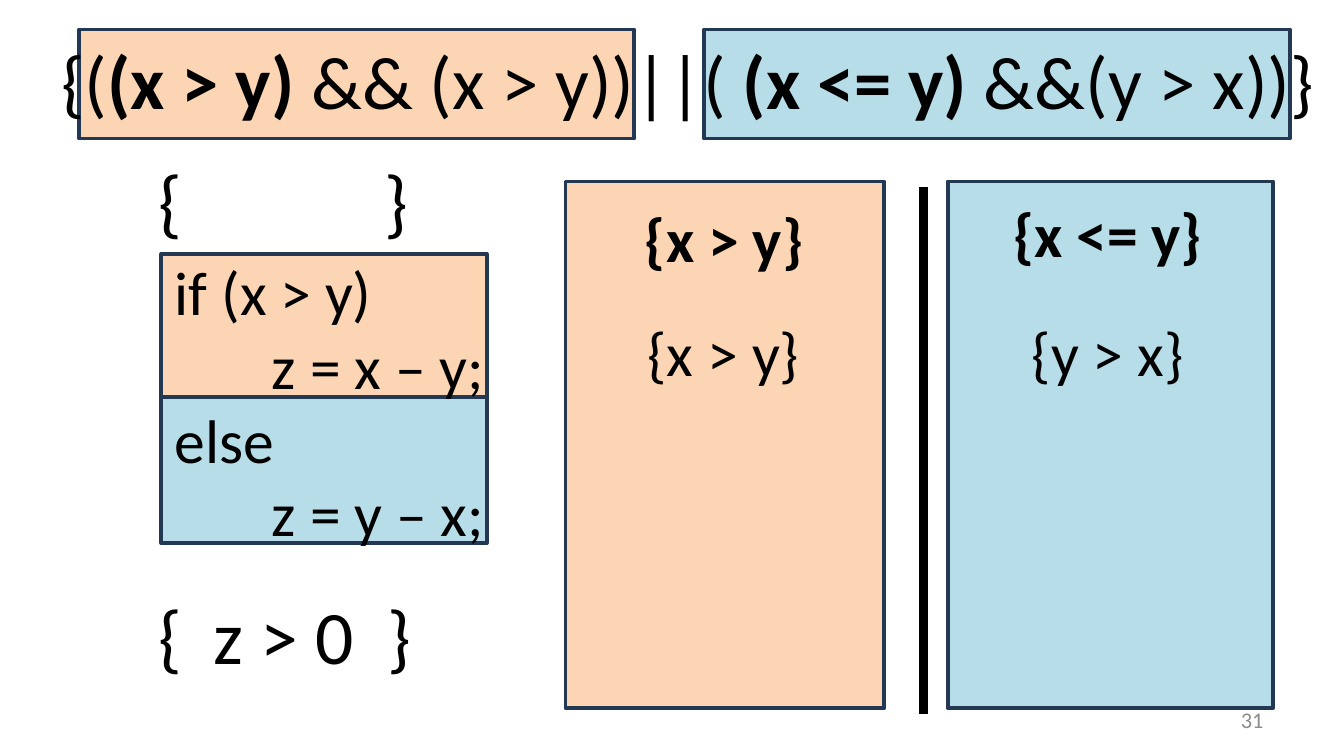
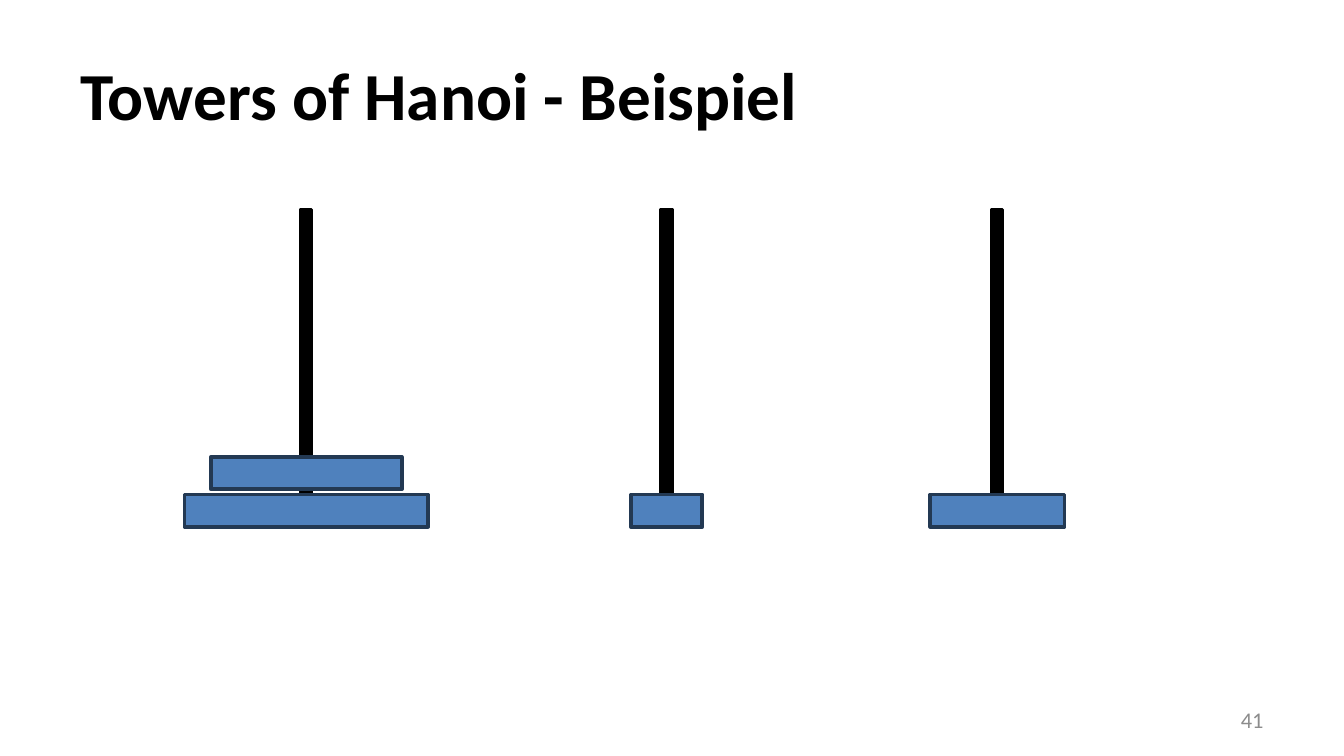
from lxml.etree import SubElement
from pptx import Presentation
from pptx.dml.color import RGBColor as Rgb
from pptx.enum.shapes import MSO_CONNECTOR as Link, MSO_SHAPE as Form
from pptx.enum.text import MSO_ANCHOR as Anchor, PP_ALIGN as Align
from pptx.oxml.ns import qn
from pptx.util import Cm, Pt

FONT = "Calibri"
HUES = {
    "ink": "000000",
    "edge": "233953",
    "then": "FCD5B5",
    "else": "B7DEE8",
    "disk": "4F81BD",
    "page": "8C8C8C",
}


def hue(name):
    return Rgb.from_string(HUES[name])


def add_box(slide, x, y, w, h, fill, edge="edge"):
    box = slide.shapes.add_shape(Form.RECTANGLE, Cm(x), Cm(y), Cm(w), Cm(h))
    box.shadow.inherit = False
    box.fill.solid()
    box.fill.fore_color.rgb = hue(fill)
    box.line.color.rgb = hue(edge)
    box.line.width = Pt(2)


def add_rule(slide, x, top, end):
    rule = slide.shapes.add_connector(Link.STRAIGHT, Cm(x), Cm(top), Cm(x), Cm(end))
    rule.line.color.rgb = hue("ink")
    rule.line.width = Pt(4.5)
    SubElement(rule._element.spPr, qn("a:effectLst"))


def set_tabs(para, stops):
    tabs = SubElement(para._p.get_or_add_pPr(), qn("a:tabLst"))
    for stop in stops:
        SubElement(tabs, qn("a:tab"), pos=str(Cm(stop)), algn="l")


def add_text(slide, x, y, w, h, lines, size, color="ink", wrap=True,
             anchor=Anchor.TOP, align=Align.LEFT, tabs=()):
    """Each line is (indent in cm, [(text, bold), ...])."""
    frame = slide.shapes.add_textbox(Cm(x), Cm(y), Cm(w), Cm(h)).text_frame
    frame.word_wrap = wrap
    frame.vertical_anchor = anchor
    for num, (indent, runs) in enumerate(lines):
        para = frame.add_paragraph() if num else frame.paragraphs[0]
        para.alignment = align
        if indent:
            para._p.get_or_add_pPr().set("marL", str(Cm(indent)))
        if tabs:
            set_tabs(para, tabs)
        for text, bold in runs:
            run = para.add_run()
            run.text = text
            run.font.name = FONT
            run.font.size = Pt(size)
            run.font.bold = bold
            run.font.color.rgb = hue(color)


def add_label(slide, x, y, w, text, bold=False):
    add_text(slide, x, y, w, 1.68, [(0, [(text, bold)])], 33, wrap=False)


def add_state(slide, y, text, tabs):
    add_text(slide, 2.74, y, 6.43, 1.98, [(0, [(text, False)])], 40.5, tabs=tabs)


def add_page(slide, num):
    add_text(slide, 18.21, 13.23, 5.92, 0.76, [(0, [(str(num), False)])], 12,
             "page", anchor=Anchor.MIDDLE, align=Align.RIGHT)


def add_title(slide, text):
    add_text(slide, 1.27, 0.58, 22.86, 2.39, [(0, [(text, True)])], 36,
             anchor=Anchor.MIDDLE)


def add_tower(slide, mid, disks):
    """Stack disks of the given widths, bottom first, on a peg centred at mid."""
    add_box(slide, mid - 0.1, 3.96, 0.2, 5.99, "ink", "ink")
    for level, width in enumerate(disks):
        add_box(slide, mid - width / 2, 9.35 - 0.71 * level, width, 0.61, "disk")


def draw_proof(slide):
    add_box(slide, 13.31, 0.56, 11.07, 2.06, "else")
    add_box(slide, 1.5, 0.56, 10.49, 2.06, "then")

    add_box(slide, 3.05, 4.8, 6.15, 2.72, "then")
    add_box(slide, 3.05, 7.5, 6.15, 2.77, "else")
    code = [(0, "if (x > y)"), (1.84, "z = x – y;"),
            (0, "else"), (1.84, "z = y – x;")]
    add_text(slide, 3.05, 4.67, 12.7, 8.71,
             [(indent, [(text, False)]) for indent, text in code], 33)

    add_box(slide, 10.69, 3.43, 6.02, 9.96, "then")
    add_box(slide, 17.91, 3.43, 6.15, 9.96, "else")
    add_rule(slide, 17.45, 3.53, 13.49)
    add_label(slide, 11.94, 3.68, 3.53, "{x > y}", True)
    add_label(slide, 18.9, 3.58, 4.11, "{x <= y}", True)
    add_label(slide, 19.25, 5.82, 3.4, "{y > x}")
    add_label(slide, 11.99, 5.82, 3.4, "{x > y}")

    add_state(slide, 2.79, "{\t}", [4.27])
    add_state(slide, 11, "{\tz > 0\t}", [1.05, 4.34])
    parts = [("{(", False), ("(x > y) ", True), ("&& (x > y))||( ", False),
             ("(x <= y) ", True), ("&&(y > x))}", False)]
    add_text(slide, 0.91, 0.53, 24.33, 1.96, [(0, parts)], 40, wrap=False)
    add_page(slide, 31)


def draw_hanoi(slide):
    add_title(slide, "Towers of Hanoi - Beispiel")
    for mid, disks in [(5.79, [4.6, 3.61]), (12.6, [1.35]), (18.85, [2.54])]:
        add_tower(slide, mid, disks)
    add_page(slide, 41)


def main():
    deck = Presentation()
    deck.slide_width, deck.slide_height = Cm(25.4), Cm(14.29)
    for draw in (draw_proof, draw_hanoi):
        draw(deck.slides.add_slide(deck.slide_layouts[6]))
    deck.save("out.pptx")


if __name__ == "__main__":
    main()
